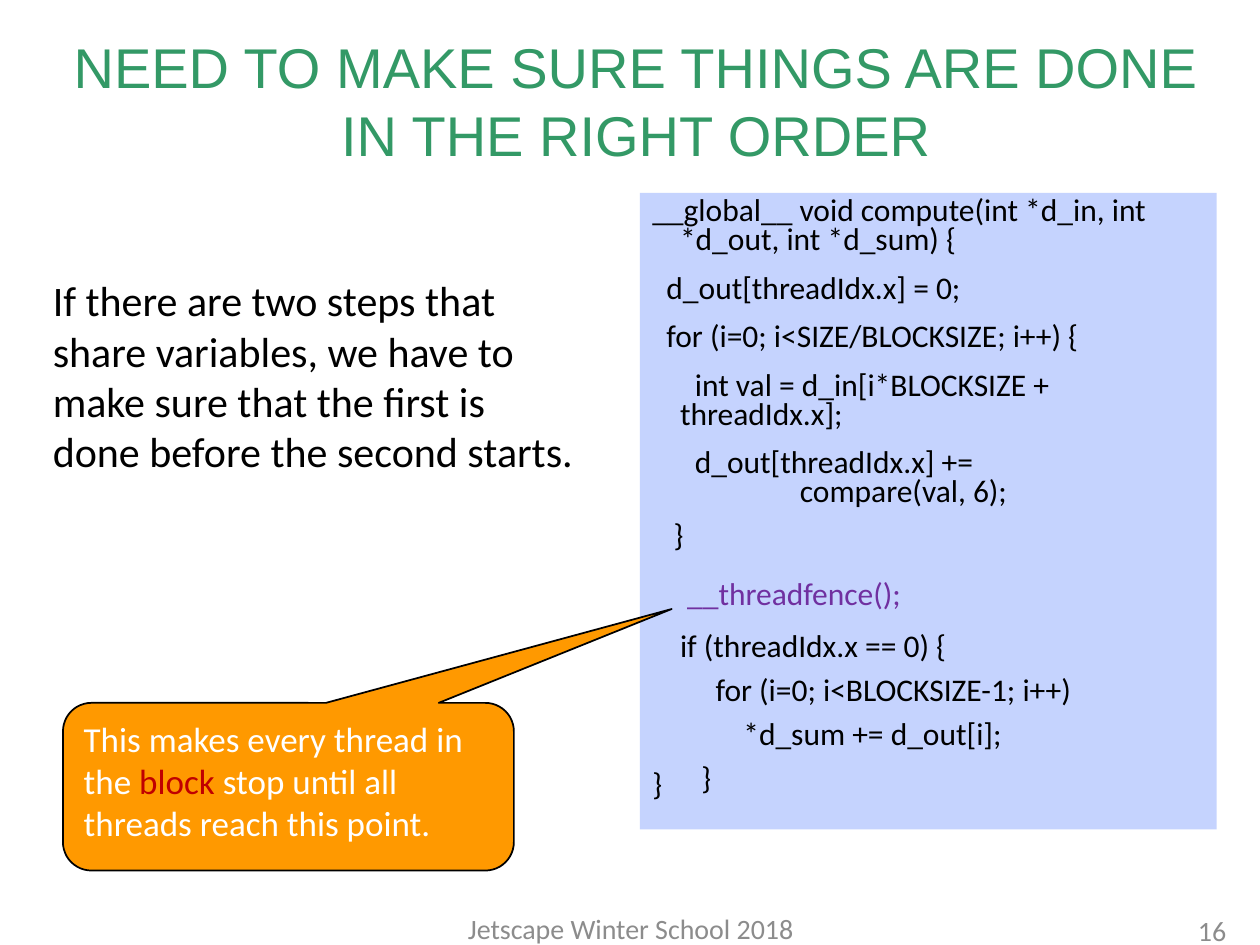
import pptx
import pptx.util
import pptx.dml.color
import pptx.enum.shapes
import pptx.enum.text
from pptx.util import Cm, Pt

ALIGN = pptx.enum.text.PP_ALIGN
ANCHOR = pptx.enum.text.MSO_ANCHOR
SHAPE = pptx.enum.shapes.MSO_SHAPE


def color(hex_string):
    return pptx.dml.color.RGBColor.from_string(hex_string)


def write(box, lines, size, hex_string, font="Calibri", anchor=ANCHOR.TOP, code=False, **para_format):
    """Fill a box with (space before, text) lines; code lines get a hanging indent."""
    frame = box.text_frame
    frame.word_wrap = True
    frame.auto_size = pptx.enum.text.MSO_AUTO_SIZE.NONE
    frame.vertical_anchor = anchor
    for index, (space, text) in enumerate(lines):
        para = frame.paragraphs[0] if index == 0 else frame.add_paragraph()
        properties = para._p.get_or_add_pPr()
        indent = Cm(0.56) if code else 0
        properties.set("marL", str(indent))
        properties.set("indent", str(-indent))
        pptx.oxml.ns  # namespace helper used for the bullet setting
        properties.append(pptx.oxml.parse_xml(
            '<a:buNone xmlns:a="http://schemas.openxmlformats.org/drawingml/2006/main"/>'))
        settings = {"alignment": ALIGN.LEFT, "space_before": Pt(space),
                    "line_spacing": 0.75 if code else 1.0, **para_format}
        for name, value in settings.items():
            setattr(para, name, value)
        # Text between bars is highlighted
        for part, words in enumerate(text.split("|")):
            span = para.add_run()
            span.text = words
            for name, value in {"name": font, "size": Pt(size), "bold": False}.items():
                setattr(span.font, name, value)
            span.font.color.rgb = color("C00000" if part % 2 else hex_string)


deck = pptx.Presentation()
deck.slide_width, deck.slide_height = Cm(25.4), Cm(19.05)
page = deck.slides.add_slide(deck.slide_layouts[1])
shapes = page.shapes

# Code panel
panel = shapes.add_shape(SHAPE.RECTANGLE, Cm(12.9), Cm(3.89), Cm(11.63), Cm(12.83))
panel.shadow.inherit = False
panel.fill.solid()
panel.fill.fore_color.rgb = color("C5D3FE")
panel.line.fill.background()
write(panel, [
    (0, "__global__ void compute(int *d_in, int *d_out, int *d_sum) {"),
    (11.7, "  d_out[threadIdx.x] = 0;"),
    (11.7, "  for (i=0; i<SIZE/BLOCKSIZE; i++) {"),
    (11.7, "      int val = d_in[i*BLOCKSIZE +\tthreadIdx.x];"),
    (11.7, "      d_out[threadIdx.x] +="),
    (0, "\t\t        compare(val, 6);"),
    (9, "   }"),
    (126, "}"),
], 18, "000000", code=True)

# Summation code
summation = shapes.add_textbox(Cm(13.46), Cm(12.67), Cm(8.66), Cm(3.6))
write(summation, [
    (0, "if (threadIdx.x == 0) {"),
    (9, "     for (i=0; i<BLOCKSIZE-1; i++)"),
    (9, "\t     *d_sum += d_out[i];"),
    (9, "   }"),
], 18, "000000", code=True)

# Title and explanation
title, body = shapes.title, page.placeholders[1]
for box, place in ((title, (1.07, 0.43, 23.5, 3.18)), (body, (0.81, 5.41, 11.05, 4.37))):
    box.left, box.top, box.width, box.height = map(Cm, place)
write(title, [(0, "NEED TO MAKE SURE THINGS ARE DONE IN THE RIGHT ORDER")], 32, "339966",
      font="Arial", anchor=ANCHOR.MIDDLE, alignment=ALIGN.CENTER)
write(body, [(0, "If there are two steps that share variables, we have to make sure "
                 "that the first is done before the second starts.")], 24, "000000")

# Callout pointing at the fence
callout = shapes.add_shape(SHAPE.ROUNDED_RECTANGULAR_CALLOUT, Cm(1.27), Cm(14.17), Cm(9.09), Cm(3.38))
for index, value in enumerate((0.85, -1.06, 0.17)):
    callout.adjustments[index] = value
callout.shadow.inherit = False
callout.fill.solid()
callout.fill.fore_color.rgb = color("FF9900")
callout.line.color.rgb = color("000000")
callout.line.width = Pt(1)
write(callout, [(0, "This makes every thread in the |block| stop until all threads reach this point.")],
      20, "FFFFFF")

# Fence call
fence = shapes.add_textbox(Cm(13.46), Cm(11.63), Cm(4.98), Cm(0.86))
write(fence, [(0, " __threadfence();")], 18, "7030A0", code=True)

# Footer and page number
for text, place, alignment in (
    ("Jetscape Winter School 2018", (8.69, 18.21, 8.05, 1.02), ALIGN.CENTER),
    ("16", (19.05, 18.24, 5.92, 1.02), ALIGN.RIGHT),
):
    footer = shapes.add_textbox(*map(Cm, place))
    write(footer, [(0, text)], 16, "8C8C8C", anchor=ANCHOR.MIDDLE, alignment=alignment)

deck.save("out.pptx")
